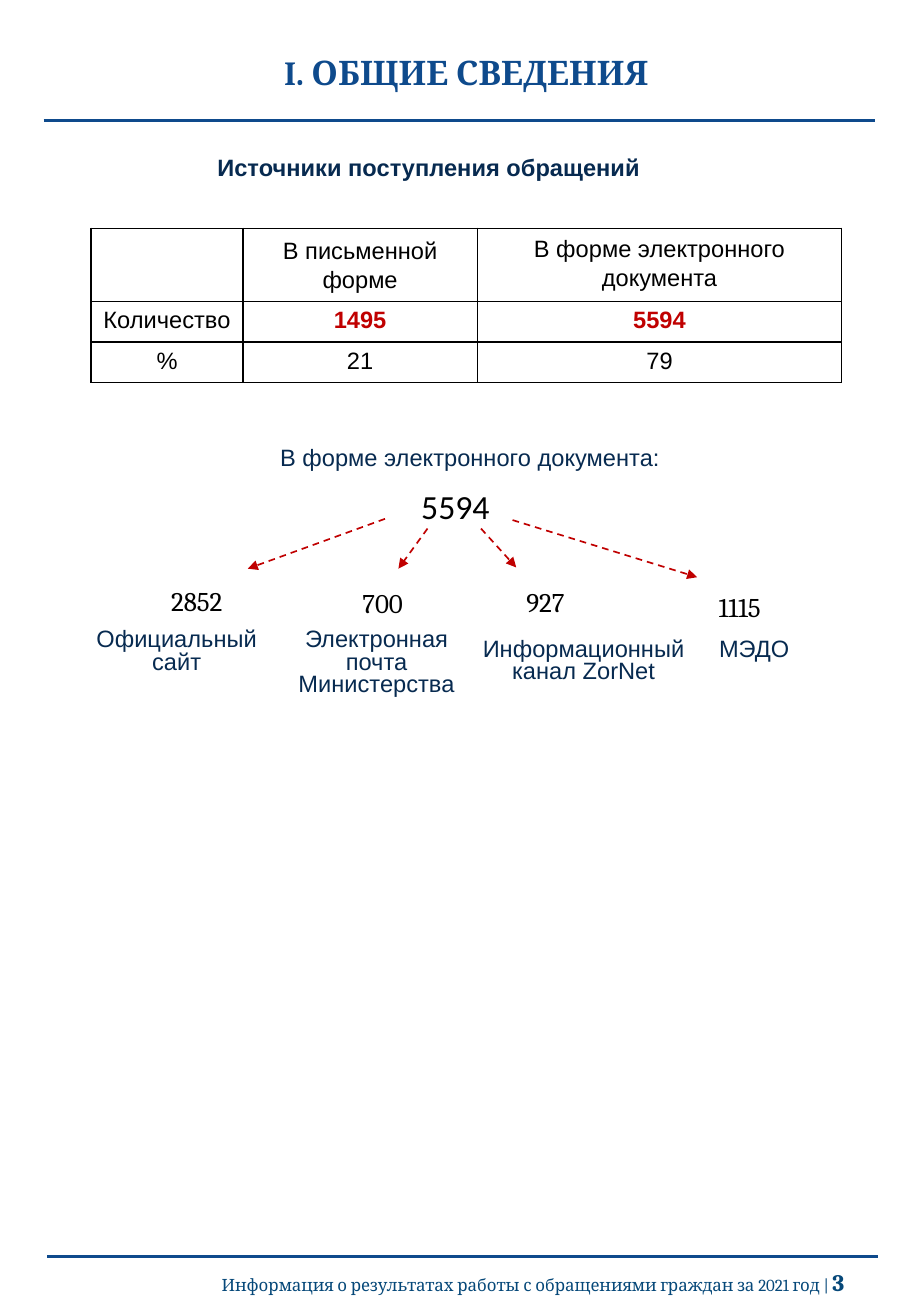
from lxml.etree import SubElement
from pptx import Presentation
from pptx.dml.color import RGBColor
from pptx.enum.dml import MSO_LINE_DASH_STYLE as Dash
from pptx.enum.shapes import MSO_CONNECTOR as Connector
from pptx.enum.text import MSO_ANCHOR as Anchor, PP_ALIGN as Align
from pptx.oxml.ns import qn
from pptx.util import Inches, Pt

BLUE = RGBColor(0x0E, 0x4A, 0x8C)
FOOTER_BLUE = RGBColor(0x06, 0x48, 0x79)
NAVY = RGBColor(0x07, 0x2A, 0x50)
RED = RGBColor(0xC0, 0x00, 0x00)
BLACK = RGBColor(0, 0, 0)


def style(para, font, size, color, bold=False, align=Align.CENTER, spacing=1.0):
    para.font.name, para.font.size, para.font.bold = font, Pt(size), bold
    para.font.color.rgb = color
    para.alignment, para.line_spacing = align, spacing


def add_text(page, left, top, width, height, text, font, size, color, **options):
    box = page.shapes.add_textbox(*map(Inches, (left, top, width, height)))
    box.text_frame.word_wrap = True
    para = box.text_frame.paragraphs[0]
    para.add_run().text = text
    style(para, font, size, color, **options)
    return box


def add_line(page, start, end, color, width):
    line = page.shapes.add_connector(Connector.STRAIGHT, *map(Inches, start + end))
    line.line.color.rgb, line.line.width = color, Pt(width)
    SubElement(line._element.spPr, qn("a:effectLst"))
    return line


def add_arrow(page, start, end):
    arrow = add_line(page, start, end, RED, 1)
    arrow.line.dash_style = Dash.DASH
    SubElement(arrow.line._get_or_add_ln(), qn("a:tailEnd"), type="triangle")


def add_border(cell):
    properties = cell._tc.get_or_add_tcPr()
    for position, side in enumerate(("lnL", "lnR", "lnT", "lnB")):
        edge = SubElement(properties, qn(f"a:{side}"), w=str(Pt(1)))
        properties.insert(position, edge)
        fill = SubElement(edge, qn("a:solidFill"))
        SubElement(fill, qn("a:srgbClr"), val=str(BLACK))


def add_header(page, left, top, width):
    title = add_text(page, left, top, width, 0.51, "I. ОБЩИЕ СВЕДЕНИЯ",
                     "Cambria", 20, BLUE, bold=True, spacing=0.9)
    title.text_frame.vertical_anchor = Anchor.BOTTOM
    rule = top + 0.69
    add_line(page, (0.36, rule), (7.2, rule), BLUE, 1.5)


def add_footer(page, left, top, width):
    add_line(page, (left, top), (left + width, top), BLUE, 1.5)
    note = add_text(page, left + 1.28, top + 0.09, width - 1.46, 0.29,
                    "Информация о результатах работы с обращениями граждан за 2021 год | ",
                    "Cambria", 10, FOOTER_BLUE, align=Align.RIGHT, spacing=0.8)
    number = note.text_frame.paragraphs[0].add_run()
    number.text = "3"
    number.font.size, number.font.bold = Pt(14), True


def add_source_table(page, left, top):
    add_text(page, left + 0.78, top - 0.63, 4, 0.3, "Источники поступления обращений",
             "Arial", 14, NAVY, bold=True, spacing=0.8)
    rows = [
        ("", "В письменной форме", "В форме электронного документа"),
        ("Количество", "1495", "5594"),
        ("%", "21", "79"),
    ]
    widths, heights = (1.25, 1.93, 3), (0.6, 0.33, 0.33)
    frame = page.shapes.add_table(3, 3, *map(Inches, (left, top, sum(widths), sum(heights))))
    table = frame.table
    for column, width in zip(table.columns, widths):
        column.width = Inches(width)
    for row, height in zip(table.rows, heights):
        row.height = Inches(height)
    for r, values in enumerate(rows):
        for c, value in enumerate(values):
            cell = table.cell(r, c)
            cell.text = value
            cell.margin_left = cell.margin_right = Inches(0.07)
            cell.fill.background()
            add_border(cell)
            is_count = r == 1 and c > 0
            style(cell.text_frame.paragraphs[0], "Arial", 14, RED if is_count else BLACK,
                  bold=is_count, spacing=1.07 if r == 0 else 1.0)
    table.cell(0, 1).vertical_anchor = Anchor.MIDDLE


def add_channels(page, left, top):
    add_text(page, left + 1, top, 4.4, 0.3, "В форме электронного документа:",
             "Arial", 14, NAVY, spacing=0.8)
    add_text(page, left + 2.58, top + 0.31, 1, 0.44, "5594", "Calibri", 20, BLACK)

    # Count, its centre and top; label, its left, top and width; arrow ends
    channels = [
        ("2852", 0.95, 1.12, "Официальный сайт", 0, 1.49, 1.57, (2.5, 0.63), (1.37, 1.04)),
        ("700", 2.48, 1.14, "Электронная почта Министерства", 1.57, 1.49, 1.72,
         (2.85, 0.71), (2.61, 1.04)),
        ("927", 3.82, 1.13, "Информационный канал ZorNet", 3.17, 1.57, 1.93,
         (3.29, 0.71), (3.58, 1.03)),
        ("1115", 5.42, 1.17, "МЭДО", 4.71, 1.57, 1.66, (3.55, 0.64), (5.07, 1.11)),
    ]
    for count, center, count_top, label, x, y, width, start, end in channels:
        add_text(page, left + center - 0.41, top + count_top, 0.82, 0.37,
                 count, "Cambria", 16, BLACK)
        add_text(page, left + x, top + y, width, 0.48, label, "Arial", 14, NAVY, spacing=0.8)
        add_arrow(page, (left + start[0], top + start[1]), (left + end[0], top + end[1]))


def main():
    deck = Presentation()
    deck.slide_width, deck.slide_height = Inches(7.5), Inches(10.83)
    page = deck.slides.add_slide(deck.slide_layouts[6])
    add_header(page, 0.09, 0.3, 7.5)
    add_source_table(page, 0.75, 1.88)
    add_channels(page, 0.67, 3.64)
    add_footer(page, 0.39, 10.34, 6.84)
    deck.save("out.pptx")


if __name__ == "__main__":
    main()
